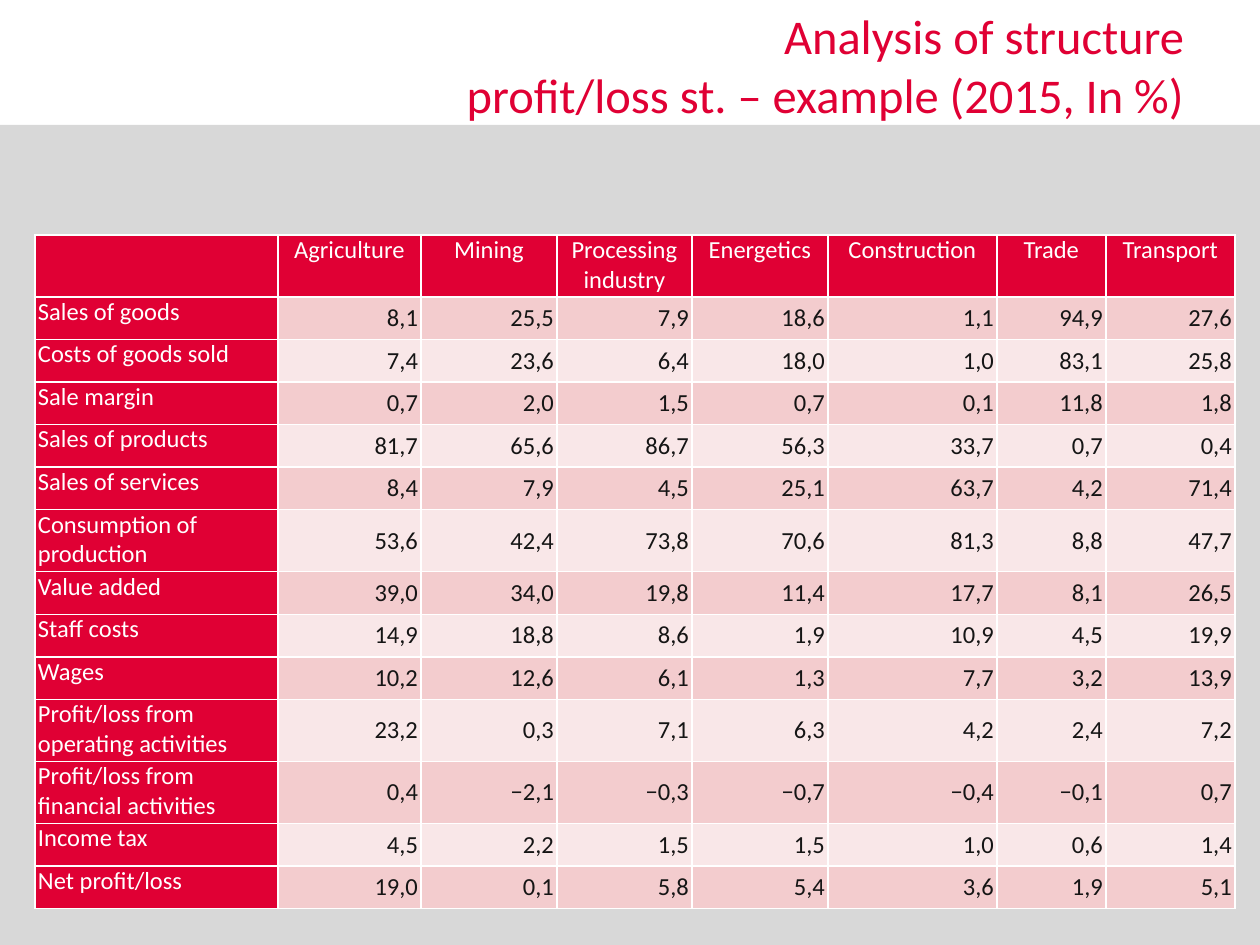
from lxml.etree import SubElement
from pptx import Presentation
from pptx.dml.color import RGBColor
from pptx.enum.shapes import MSO_SHAPE
from pptx.enum.text import MSO_ANCHOR, PP_ALIGN
from pptx.oxml.ns import qn
from pptx.util import Pt

PX = 914400 / 126
RED, WHITE, GREY, INK = "E00034", "FFFFFF", "D8D8D8", "151515"
BANDS = ("F3CCCE", "F9E7E8")
WIDTHS = (243, 143, 136, 135, 136, 169, 109, 129)
TALL = 62
HEADS = ("", "Agriculture", "Mining", "Processing industry", "Energetics",
         "Construction", "Trade", "Transport")
ROWS = (
    ("Sales of goods", "8,1 25,5 7,9 18,6 1,1 94,9 27,6"),
    ("Costs of goods sold", "7,4 23,6 6,4 18,0 1,0 83,1 25,8"),
    ("Sale margin", "0,7 2,0 1,5 0,7 0,1 11,8 1,8"),
    ("Sales of products", "81,7 65,6 86,7 56,3 33,7 0,7 0,4"),
    ("Sales of services", "8,4 7,9 4,5 25,1 63,7 4,2 71,4"),
    ("Consumption of production", "53,6 42,4 73,8 70,6 81,3 8,8 47,7"),
    ("Value added", "39,0 34,0 19,8 11,4 17,7 8,1 26,5"),
    ("Staff costs", "14,9 18,8 8,6 1,9 10,9 4,5 19,9"),
    ("Wages", "10,2 12,6 6,1 1,3 7,7 3,2 13,9"),
    ("Profit/loss from operating activities", "23,2 0,3 7,1 6,3 4,2 2,4 7,2"),
    ("Profit/loss from financial activities",
     "0,4 −2,1 −0,3 −0,7 −0,4 −0,1 0,7"),
    ("Income tax", "4,5 2,2 1,5 1,5 1,0 0,6 1,4"),
    ("Net profit/loss", "19,0 0,1 5,8 5,4 3,6 1,9 5,1"),
)


def emu(px):
    """Turn px into EMU."""
    return round(px * PX)


def color(code):
    """Turn a hex string into a colour."""
    return RGBColor.from_string(code)


def write(frame, text, size=14, ink=WHITE, align=PP_ALIGN.LEFT):
    """Write one formatted paragraph into a text frame."""
    para = frame.paragraphs[0]
    para.text = text
    para.alignment = align
    for run in para.runs:
        run.font.name = "Calibri"
        run.font.size = Pt(size)
        run.font.color.rgb = color(ink)


def edge(cell):
    """Draw thin white lines on all sides of a cell."""
    props = cell._tc.get_or_add_tcPr()
    for spot, side in enumerate(("lnL", "lnR", "lnT", "lnB")):
        line = props.makeelement(qn(f"a:{side}"), {"w": str(Pt(1))})
        fill = SubElement(line, qn("a:solidFill"))
        SubElement(fill, qn("a:srgbClr"), val=WHITE)
        props.insert(spot, line)


def panel(slide, left, top, width, height):
    """Lay the grey panel behind the table."""
    box = slide.shapes.add_shape(
        MSO_SHAPE.RECTANGLE, *map(emu, (left, top, width, height)))
    box.shadow.inherit = False
    box.fill.solid()
    box.fill.fore_color.rgb = color(GREY)
    box.line.fill.background()


def title(slide, left, top, width, height):
    """Place the two-line title, aligned right."""
    box = slide.shapes.add_textbox(*map(emu, (left, top, width, height)))
    frame = box.text_frame
    frame.word_wrap = True
    frame.vertical_anchor = MSO_ANCHOR.MIDDLE
    write(frame, "Analysis of structure\vprofit/loss st. – example (2015, In %)",
          size=27.7, ink=RED, align=PP_ALIGN.RIGHT)


def style(cell, text, row, col):
    """Fill one cell as a head, a row label or a value."""
    value = row > 0 and col > 0
    cell.margin_left = cell.margin_right = emu(3)
    cell.margin_top = cell.margin_bottom = 0
    cell.vertical_anchor = MSO_ANCHOR.MIDDLE if value else MSO_ANCHOR.TOP
    cell.fill.solid()
    cell.fill.fore_color.rgb = color(BANDS[(row - 1) % 2] if value else RED)
    align = (PP_ALIGN.CENTER if row == 0
             else PP_ALIGN.RIGHT if col else PP_ALIGN.LEFT)
    write(cell.text_frame, text, ink=INK if value else WHITE, align=align)
    edge(cell)


def grid(slide, left, top, width, height):
    """Build the table, with taller rows where text takes two lines."""
    data = [HEADS] + [(name, *nums.split()) for name, nums in ROWS]
    tall = [row == 0 or len(line[0]) > 20 for row, line in enumerate(data)]
    short = (height - TALL * sum(tall)) / (len(data) - sum(tall))
    table = slide.shapes.add_table(
        len(data), len(HEADS), *map(emu, (left, top, width, height))).table
    for col, size in zip(table.columns, WIDTHS):
        col.width = emu(size)
    for row, line in enumerate(data):
        table.rows[row].height = emu(TALL if tall[row] else short)
        for col, text in enumerate(line):
            style(table.cell(row, col), text, row, col)


def main():
    """Build and save the slide."""
    deck = Presentation()
    deck.slide_width, deck.slide_height = emu(1260), emu(945)
    slide = deck.slides.add_slide(deck.slide_layouts[6])
    panel(slide, 0, 125, 1260, 820)
    title(slide, 321, 23, 876, 83)
    grid(slide, 35, 235, sum(WIDTHS), 674)
    deck.save("out.pptx")


if __name__ == "__main__":
    main()
